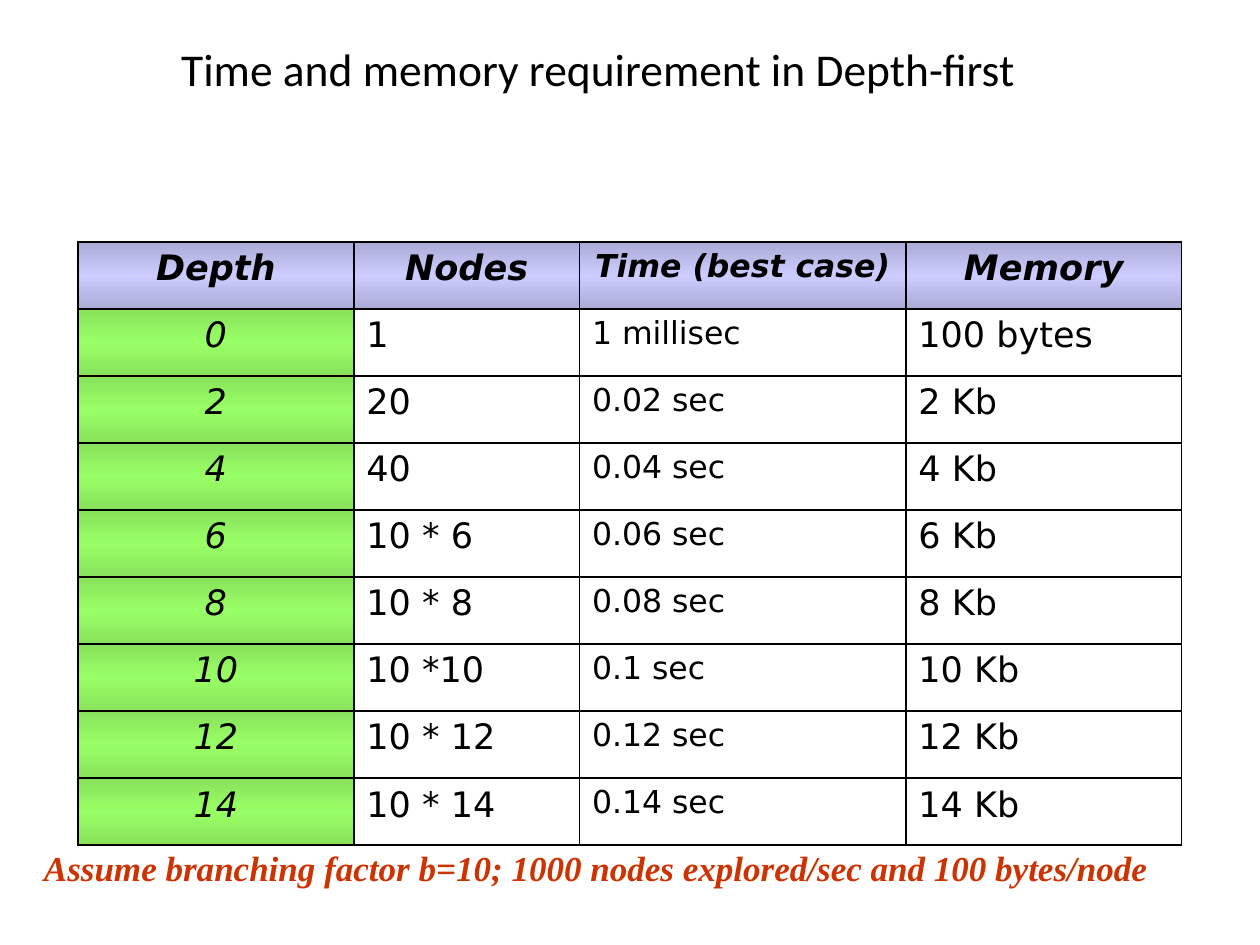
from dataclasses import dataclass

import lxml.etree
import pptx
import pptx.dml.color
import pptx.enum.text
import pptx.oxml.ns
import pptx.util

Pt = pptx.util.Pt
RGBColor = pptx.dml.color.RGBColor
ALIGN = pptx.enum.text.PP_ALIGN
ANCHOR = pptx.enum.text.MSO_ANCHOR
qn = pptx.oxml.ns.qn

BLACK = RGBColor(0x00, 0x00, 0x00)
RUST = RGBColor(0xCC, 0x33, 0x00)
LAVENDER = RGBColor(0xCC, 0xCC, 0xFF)
LAVENDER_EDGE = RGBColor(0xAB, 0xAB, 0xD6)
GREEN = RGBColor(0x99, 0xFF, 0x66)
GREEN_EDGE = RGBColor(0x88, 0xE2, 0x5B)

ROW_HEIGHT = 38.3
HEADINGS = ("Depth", "Nodes", "Time (best case)", "Memory")
REQUIREMENTS = (
    ("0", "1", "1 millisec", "100 bytes"),
    ("2", "20", "0.02 sec", "2 Kb"),
    ("4", "40", "0.04 sec", "4 Kb"),
    ("6", "10 * 6", "0.06 sec", "6 Kb"),
    ("8", "10 * 8", "0.08 sec", "8 Kb"),
    ("10", "10 *10", "0.1 sec", "10 Kb"),
    ("12", "10 * 12", "0.12 sec", "12 Kb"),
    ("14", "10 * 14", "0.14 sec", "14 Kb"),
)


@dataclass(frozen=True)
class TextStyle:
    face: str
    size: float
    color: RGBColor = BLACK
    bold: bool = False
    italic: bool = False
    align: ALIGN = ALIGN.LEFT
    space_before: int = 0


@dataclass(frozen=True)
class Caption:
    text: str
    left: float
    top: float
    width: float
    height: float
    anchor: ANCHOR
    style: TextStyle


@dataclass(frozen=True)
class Column:
    width: float
    size: float


COLUMNS = (Column(157.7, 20), Column(128.9, 20), Column(186.5, 18), Column(157.7, 20))
CAPTIONS = (
    Caption("Time and memory requirement in Depth-first", 36, 12.24, 612, 54,
            ANCHOR.MIDDLE, TextStyle("Calibri", 26, align=ALIGN.CENTER)),
    Caption("Assume branching factor b=10; 1000 nodes explored/sec and 100 bytes/node",
            18, 480.24, 666, 31, ANCHOR.TOP,
            TextStyle("Times New Roman", 20, RUST, True, True, space_before=50)),
)


def write(frame, text: str, style: TextStyle) -> None:
    paragraph = frame.paragraphs[0]
    paragraph.text = text
    paragraph.alignment = style.align
    font = paragraph.font
    font.name = style.face
    font.size = Pt(style.size)
    font.bold = style.bold
    font.italic = style.italic
    font.color.rgb = style.color
    if style.space_before:
        spacing = lxml.etree.Element(qn("a:spcBef"))
        lxml.etree.SubElement(spacing, qn("a:spcPct"), val=str(style.space_before * 1000))
        paragraph._p.get_or_add_pPr().insert(0, spacing)


def add_caption(slide, caption: Caption) -> None:
    box = slide.shapes.add_textbox(
        Pt(caption.left), Pt(caption.top), Pt(caption.width), Pt(caption.height))
    box.text_frame.word_wrap = True
    box.text_frame.vertical_anchor = caption.anchor
    write(box.text_frame, caption.text, caption.style)


def add_borders(cell) -> None:
    properties = cell._tc.get_or_add_tcPr()
    for side in ("a:lnL", "a:lnR", "a:lnT", "a:lnB"):
        border = lxml.etree.SubElement(properties, qn(side), w=str(Pt(1)))
        solid = lxml.etree.SubElement(border, qn("a:solidFill"))
        lxml.etree.SubElement(solid, qn("a:srgbClr"), val=str(BLACK))


def fill_gradient(cell, edge: RGBColor, middle: RGBColor) -> None:
    gradient = lxml.etree.SubElement(cell._tc.get_or_add_tcPr(), qn("a:gradFill"))
    stops = lxml.etree.SubElement(gradient, qn("a:gsLst"))
    for percent, color in ((0, edge), (50, middle), (100, edge)):
        stop = lxml.etree.SubElement(stops, qn("a:gs"), pos=str(percent * 1000))
        lxml.etree.SubElement(stop, qn("a:srgbClr"), val=str(color))
    lxml.etree.SubElement(gradient, qn("a:lin"), ang=str(90 * 60000), scaled="0")


def add_requirements(slide) -> None:
    rows = (HEADINGS, *REQUIREMENTS)
    table = slide.shapes.add_table(
        len(rows), len(COLUMNS), Pt(44.5), Pt(138.3),
        Pt(sum(column.width for column in COLUMNS)), Pt(ROW_HEIGHT * len(rows))).table
    table.horz_banding = False
    for table_column, column in zip(table.columns, COLUMNS):
        table_column.width = Pt(column.width)
    for row_index, row in enumerate(rows):
        table.rows[row_index].height = Pt(ROW_HEIGHT)
        for column_index, (text, column) in enumerate(zip(row, COLUMNS)):
            cell = table.cell(row_index, column_index)
            heading = row_index == 0
            label = heading or column_index == 0
            write(cell.text_frame, text, TextStyle(
                "DejaVu Sans", column.size, bold=heading, italic=label,
                align=ALIGN.CENTER if label else ALIGN.LEFT, space_before=20))
            add_borders(cell)
            if heading:
                fill_gradient(cell, LAVENDER_EDGE, LAVENDER)
            elif label:
                fill_gradient(cell, GREEN_EDGE, GREEN)
            else:
                cell.fill.background()


def main() -> None:
    presentation = pptx.Presentation()
    presentation.slide_width = Pt(720)
    presentation.slide_height = Pt(540)
    slide = presentation.slides.add_slide(presentation.slide_layouts[6])
    title, assumption = CAPTIONS
    add_caption(slide, title)
    add_requirements(slide)
    add_caption(slide, assumption)
    presentation.save("out.pptx")


if __name__ == "__main__":
    main()
